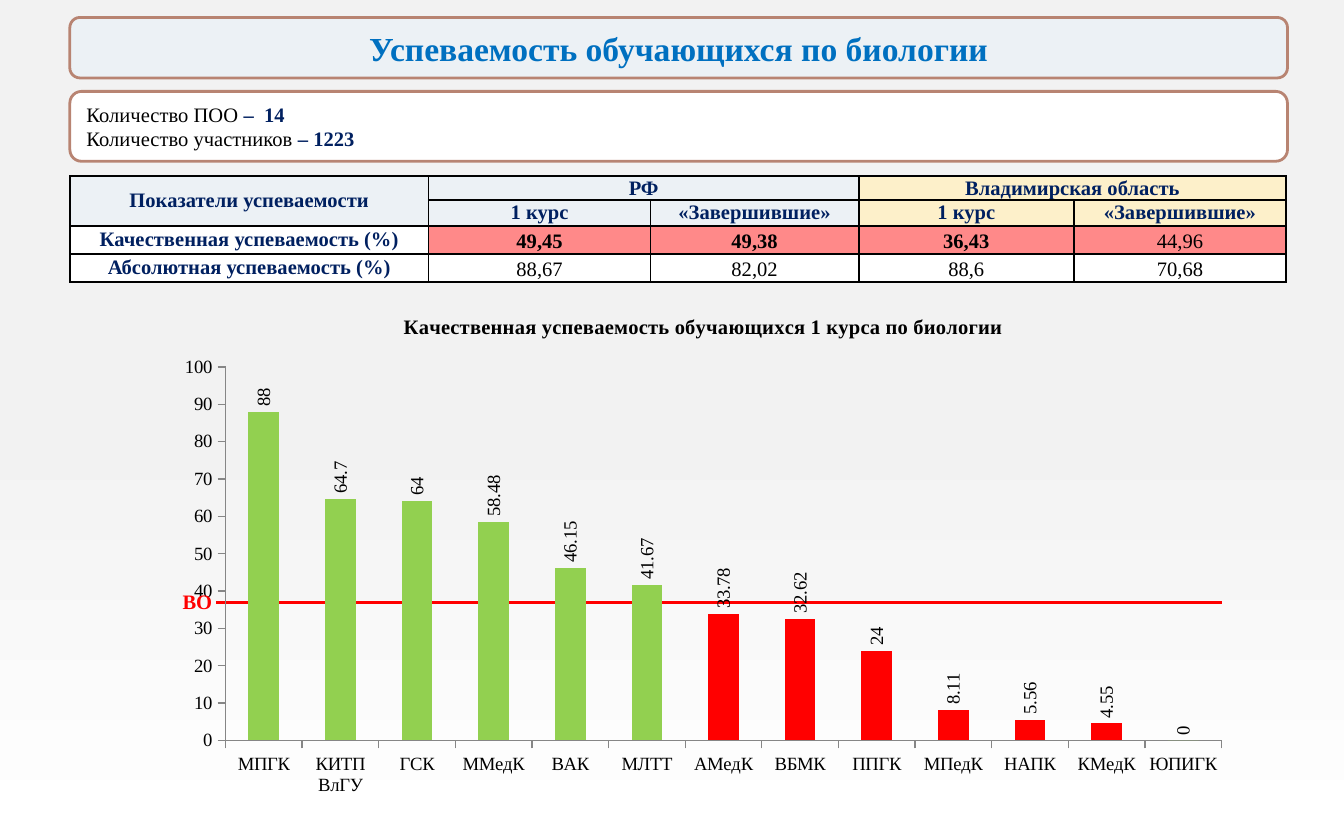
from copy import deepcopy
from lxml.etree import SubElement
from pptx import Presentation
from pptx.chart.data import CategoryChartData
from pptx.dml.color import RGBColor
from pptx.enum.chart import XL_CHART_TYPE, XL_LABEL_POSITION, XL_TICK_MARK
from pptx.enum.shapes import MSO_CONNECTOR, MSO_SHAPE
from pptx.enum.text import MSO_ANCHOR, PP_ALIGN
from pptx.oxml import parse_xml
from pptx.oxml.ns import nsdecls, qn
from pptx.util import Inches, Pt

COLORS = {key: RGBColor.from_string(value) for key, value in {
    "black": "000000", "white": "FFFFFF", "navy": "002060", "title": "0070C0",
    "frame": "B88472", "pale": "ECF1F5", "cream": "FDF0CA", "pink": "FF8989",
    "red": "FF0000", "green": "92D050", "gray": "F2F2F2", "axis": "868686",
}.items()}
FONT = "Times New Roman"

deck = Presentation()
deck.slide_width, deck.slide_height = Inches(10), Inches(6.25)
slide = deck.slides.add_slide(deck.slide_layouts[6])


def share(left, top, width, height):
    """Turn percentages of the slide's size into lengths."""
    return [int(part * side / 100) for part, side in zip(
        (left, top, width, height), (deck.slide_width, deck.slide_height) * 2)]


def write(paragraph, words, color, bold=True, size=11):
    run = paragraph.add_run()
    run.text = words
    look = {"name": FONT, "size": Pt(size), "bold": bold}
    for key, value in look.items():
        setattr(run.font, key, value)
    run.font.color.rgb = COLORS[color]


# Background: gray down to the middle, then fading to white
backdrop = slide.background.fill
backdrop.gradient()
backdrop.gradient_angle = 270
first_stop = backdrop.gradient_stops[0]._gs
first_stop.addnext(deepcopy(first_stop))
for stop, (position, color) in zip(
        backdrop.gradient_stops, ((0, "gray"), (0.5, "gray"), (1, "white"))):
    stop.position = position
    stop.color.rgb = COLORS[color]

# Regional average, running behind the columns
left, level, right, _ = share(16.1, 71.68, 90.9, 0)
average = slide.shapes.add_connector(MSO_CONNECTOR.STRAIGHT, right, level, left, level)
average.line.color.rgb = COLORS["red"]
average.line.width = Pt(1.5)
SubElement(average._element.spPr, qn("a:effectLst"))

# Heading and summary panels
panels = [
    (2.08, 7.2, "pale", PP_ALIGN.CENTER, 18,
     [[("Успеваемость обучающихся по биологии", "title", True)]]),
    (10.88, 8.32, "white", PP_ALIGN.LEFT, 11,
     [[("Количество ПОО ", "black", False), ("–  14", "navy", True)],
      [("Количество участников ", "black", False), ("– 1223", "navy", True)]]),
]
for top, height, fill, align, size, lines in panels:
    panel = slide.shapes.add_shape(
        MSO_SHAPE.ROUNDED_RECTANGLE, *share(5.2, top, 90.6, height))
    panel.shadow.inherit = False
    panel.fill.solid()
    panel.fill.fore_color.rgb = COLORS[fill]
    panel.line.color.rgb = COLORS["frame"]
    panel.line.width = Pt(1.5)
    frame = panel.text_frame
    frame.word_wrap = True
    frame.vertical_anchor = MSO_ANCHOR.MIDDLE
    for index, pieces in enumerate(lines):
        paragraph = frame.add_paragraph() if index else frame.paragraphs[0]
        paragraph.alignment = align
        for words, color, bold in pieces:
            write(paragraph, words, color, bold, size)

# Results table
results = [
    ["Показатели успеваемости", "РФ", "", "Владимирская область", ""],
    ["", "1 курс", "«Завершившие»", "1 курс", "«Завершившие»"],
    ["Качественная успеваемость (%)", "49,45", "49,38", "36,43", "44,96"],
    ["Абсолютная успеваемость (%)", "88,67", "82,02", "88,6", "70,68"],
]
header_fills = ["pale"] * 3 + ["cream"] * 2
row_fills = [header_fills, header_fills, ["white"] + ["pink"] * 4, ["white"] * 5]
table = slide.shapes.add_table(4, 5, *share(5.2, 20.96, 90.6, 12.64)).table
table.first_row = table.horz_banding = False
for column, width in zip(table.columns, (26.7, 16.5, 15.5, 16, 15.8)):
    column.width = share(width, 0, 0, 0)[0]
for row, height in zip(table.rows, (2.88, 3.04, 3.36, 3.36)):
    row.height = share(0, height, 0, 0)[1]
for start, end in (((0, 0), (1, 0)), ((0, 1), (0, 2)), ((0, 3), (0, 4))):
    table.cell(*start).merge(table.cell(*end))
cell_format = {"margin_left": Inches(0.07), "margin_right": Inches(0.07),
               "margin_top": 0, "margin_bottom": 0,
               "vertical_anchor": MSO_ANCHOR.MIDDLE}
for r, row in enumerate(results):
    for c, words in enumerate(row):
        cell = table.cell(r, c)
        for key, value in cell_format.items():
            setattr(cell, key, value)
        for edge in ("lnL", "lnR", "lnT", "lnB"):
            cell._tc.get_or_add_tcPr().append(parse_xml(
                f'<a:{edge} {nsdecls("a")} w="12700"><a:solidFill>'
                f'<a:srgbClr val="{COLORS["black"]}"/></a:solidFill></a:{edge}>'))
        cell.fill.solid()
        cell.fill.fore_color.rgb = COLORS[row_fills[r][c]]
        if words:
            is_value = r > 1 and c > 0
            paragraph = cell.text_frame.paragraphs[0]
            paragraph.alignment = PP_ALIGN.CENTER
            if is_value:
                paragraph.line_spacing = 1.15
            write(paragraph, words, "black" if is_value else "navy",
                  not is_value or (r == 2 and c < 4))

# Column chart of first-year results by college
scores = {"МПГК": 88, "КИТП ВлГУ": 64.7, "ГСК": 64, "ММедК": 58.48, "ВАК": 46.15,
          "МЛТТ": 41.67, "АМедК": 33.78, "ВБМК": 32.62, "ППГК": 24, "МПедК": 8.11,
          "НАПК": 5.56, "КМедК": 4.55, "ЮПИГК": 0}
chart_data = CategoryChartData()
chart_data.categories = list(scores)
chart_data.add_series("Качественная успеваемость", list(scores.values()))
chart = slide.shapes.add_chart(XL_CHART_TYPE.COLUMN_CLUSTERED,
                               *share(12.2, 34.88, 80.3, 61.12), chart_data).chart
chart.has_legend = False
chart.font.name = FONT
chart.font.size = Pt(10)
chart.font.color.rgb = COLORS["black"]
chart.has_title = True
write(chart.chart_title.text_frame.paragraphs[0],
      "Качественная успеваемость обучающихся 1 курса по биологии", "black")
chart.chart_title.include_in_layout = False

for axis in (chart.category_axis, chart.value_axis):
    axis.has_major_gridlines = False
    axis.major_tick_mark = XL_TICK_MARK.OUTSIDE
    axis.format.line.color.rgb = COLORS["axis"]
    axis.tick_labels.font.name = FONT
    axis.tick_labels.font.size = Pt(10)
scale = {"minimum_scale": 0, "maximum_scale": 100, "major_unit": 10}
for key, value in scale.items():
    setattr(chart.value_axis, key, value)

plot = chart.plots[0]
plot.gap_width = 150
plot.vary_by_categories = False
columns = plot.series[0]
columns.invert_if_negative = False
columns.format.fill.solid()
columns.format.fill.fore_color.rgb = COLORS["green"]
for index, score in enumerate(scores.values()):
    if 0 < score < 36.43:
        fill = columns.points[index].format.fill
        fill.solid()
        fill.fore_color.rgb = COLORS["red"]
labels = columns.data_labels
labels.show_value = True
labels.position = XL_LABEL_POSITION.OUTSIDE_END
labels.font.name = FONT
labels.font.size = Pt(10)
turned = labels._element.find(qn("c:txPr")).find(qn("a:bodyPr"))
turned.set("rot", "-5400000")
turned.set("vert", "horz")

# Fix the plot area so that the average line meets the scale
plot_area = chart._chartSpace.chart.plotArea
for old_layout in plot_area.findall(qn("c:layout")):
    plot_area.remove(old_layout)
settings = {"layoutTarget": "inner", "xMode": "edge", "yMode": "edge",
            "x": 0.057, "y": 0.144, "w": 0.923, "h": 0.728}
plot_area.insert(0, parse_xml(
    f'<c:layout {nsdecls("c")}><c:manualLayout>'
    + "".join(f'<c:{key} val="{value}"/>' for key, value in settings.items())
    + "</c:manualLayout></c:layout>"))

# Name of the average line
region = slide.shapes.add_textbox(*share(12.6, 69.28, 4.2, 4.64))
region.text_frame.word_wrap = False
write(region.text_frame.paragraphs[0], "ВО", "red")

deck.save("out.pptx")
